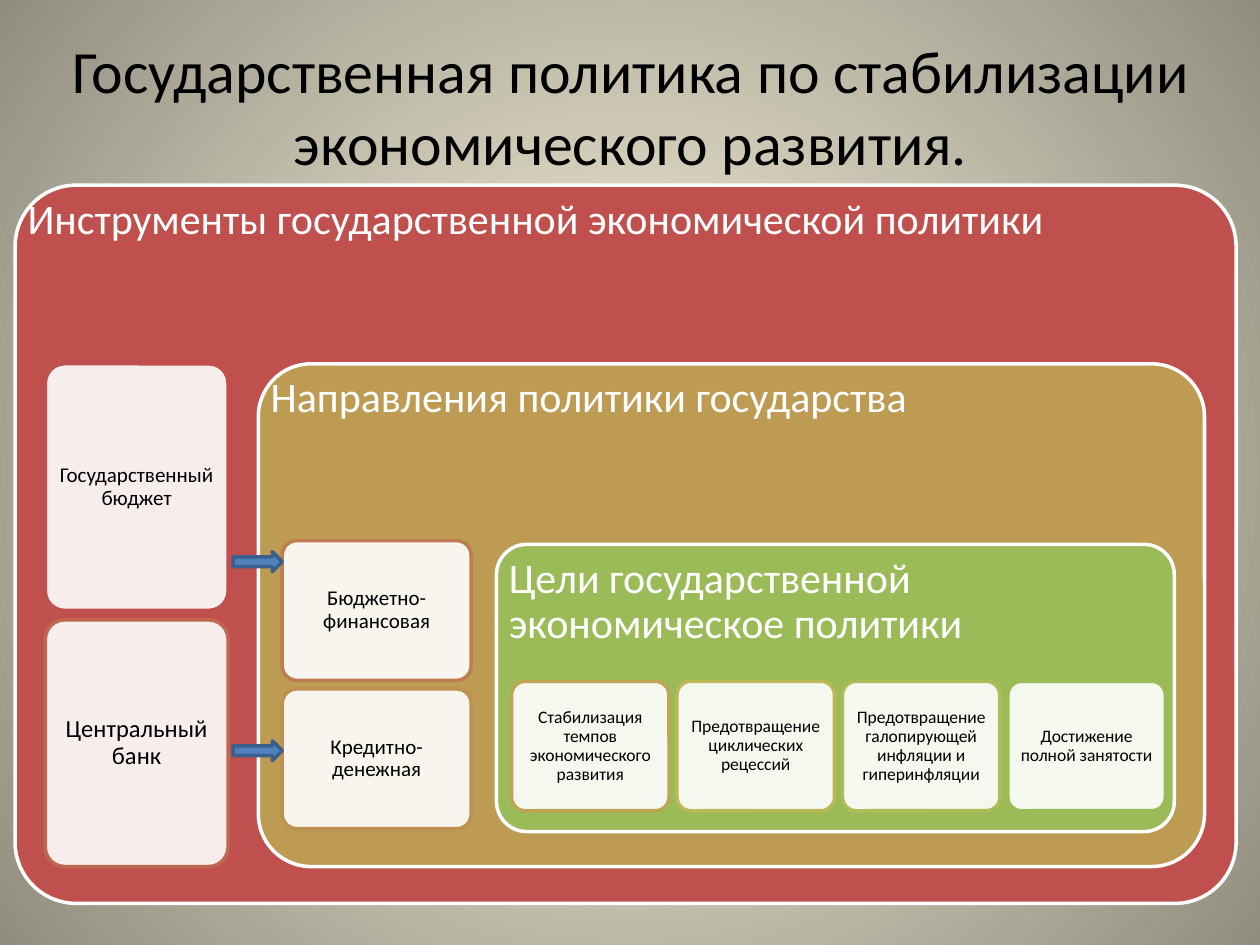
from lxml import etree
from pptx import Presentation
from pptx.dml.color import RGBColor
from pptx.enum.shapes import MSO_SHAPE
from pptx.enum.text import MSO_ANCHOR, PP_ALIGN
from pptx.oxml.ns import qn
from pptx.util import Inches, Pt

ROUND, ARROW = MSO_SHAPE.ROUNDED_RECTANGLE, MSO_SHAPE.RIGHT_ARROW
TOP, MIDDLE = MSO_ANCHOR.TOP, MSO_ANCHOR.MIDDLE
LEFT, CENTER = PP_ALIGN.LEFT, PP_ALIGN.CENTER

BLACK = RGBColor(0x00, 0x00, 0x00)
WHITE = RGBColor(0xFF, 0xFF, 0xFF)
CREAM = RGBColor(0xFC, 0xF7, 0xDD)
GREY = RGBColor(0x91, 0x8E, 0x81)
RED = RGBColor(0xC0, 0x50, 0x4D)
GOLD = RGBColor(0xBD, 0x9B, 0x53)
GREEN = RGBColor(0x9B, 0xBB, 0x59)
BLUE = RGBColor(0x4F, 0x81, 0xBD)
DARK_BLUE = RGBColor(0x3A, 0x5F, 0x8C)

prs = Presentation()
prs.slide_width, prs.slide_height = Inches(10), Inches(7.5)
COL, ROW = prs.slide_width / 100, prs.slide_height / 100
s = prs.slides.add_slide(prs.slide_layouts[5])


def add_box(kind, box, fill, line):
    x, y, w, h = box
    sp = s.shapes.add_shape(kind, int(x * COL), int(y * ROW), int(w * COL), int(h * ROW))
    sp.shadow.inherit = False
    sp.fill.solid()
    sp.fill.fore_color.rgb = fill
    sp.line.color.rgb = line
    sp.line.width = Pt(2)
    return sp


def write(sp, text, size, color, align, anchor, margin, spacing=0.9):
    tf = sp.text_frame
    frame = {"word_wrap": True, "vertical_anchor": anchor}
    for side in ("left", "top", "right", "bottom"):
        frame["margin_" + side] = Inches(margin)
    for name, value in frame.items():
        setattr(tf, name, value)
    p = tf.paragraphs[0]
    p.alignment, p.line_spacing = align, spacing
    r = p.add_run()
    r.text = text
    for name, value in {"size": Pt(size), "name": "Calibri"}.items():
        setattr(r.font, name, value)
    r.font.color.rgb = color


# Background: radial gradient from the centre
bg = s.background.fill
bg.gradient()
for stop, color in zip(bg.gradient_stops, (CREAM, GREY)):
    stop.color.rgb = color
grad = s.element.find(".//" + qn("a:gradFill"))
grad.remove(grad.find(qn("a:lin")))
radial = etree.SubElement(grad, qn("a:path"), path="circle")
etree.SubElement(radial, qn("a:fillToRect"), l="50000", t="50000", r="50000", b="50000")

title = s.shapes.title
title.left, title.top = int(2.8 * COL), int(2.8 * ROW)
title.width, title.height = int(94.5 * COL), int(16.8 * ROW)
write(title, "Государственная политика по стабилизации экономического развития.",
      34.2, BLACK, CENTER, MIDDLE, 0.1, 1.0)

# Nested panels, each with a heading at its top left
panels = [
    ("Инструменты государственной экономической политики", (1.2, 19.6, 96.9, 76), RED, 0.085),
    ("Направления политики государства", (20.5, 38.5, 75.1, 53.2), GOLD, 0.105),
    ("Цели государственной экономическое политики", (39.4, 57.6, 53.8, 30.4), GREEN, 0.105),
]
for text, box, fill, corner in panels:
    add_box(ROUND, box, fill, WHITE).adjustments[0] = corner
    x, y, w, h = box
    heading = s.shapes.add_textbox(int(x * COL), int(y * ROW), int(w * COL), int(12 * ROW))
    write(heading, text, 24, WHITE, LEFT, TOP, 0.1)

# Cards: one column per outer panel, one row in the innermost panel
TOOL, POLICY, GOAL = (14.5, 26.1), (15, 14.8), (12.5, 13.7)
goals = [
    ("Стабилизация темпов экономического развития", RGBColor(0xBD, 0xA5, 0x54)),
    ("Предотвращение циклических рецессий", RGBColor(0xBC, 0xB8, 0x56)),
    ("Предотвращение галопирующей инфляции и гиперинфляции", RGBColor(0xAE, 0xBC, 0x57)),
    ("Достижение полной занятости", GREEN),
]
cards = [
    ("Государственный бюджет", (3.6, 38.5, *TOOL), RED, 12),
    ("Центральный банк", (3.6, 65.6, *TOOL), RGBColor(0xBF, 0x67, 0x4F), 14),
    ("Бюджетно-финансовая", (22.4, 57.2, *POLICY), RGBColor(0xBF, 0x7C, 0x50), 12),
    ("Кредитно-денежная", (22.4, 72.9, *POLICY), RGBColor(0xBE, 0x91, 0x52), 12),
]
cards += [(text, (40.6 + 13.13 * i, 72.1, *GOAL), line, 10)
          for i, (text, line) in enumerate(goals)]
for text, box, line, size in cards:
    card = add_box(ROUND, box, WHITE, line)
    card.adjustments[0] = 0.105
    fill_color = card.fill._xPr.find(qn("a:solidFill"))[0]
    etree.SubElement(fill_color, qn("a:alpha"), val="90000")
    write(card, text, size, BLACK, CENTER, MIDDLE, 0.01)

for y in (58.4, 78.4):
    add_box(ARROW, (18.5, y, 3.9, 2.1), BLUE, DARK_BLUE)

prs.save("out.pptx")
